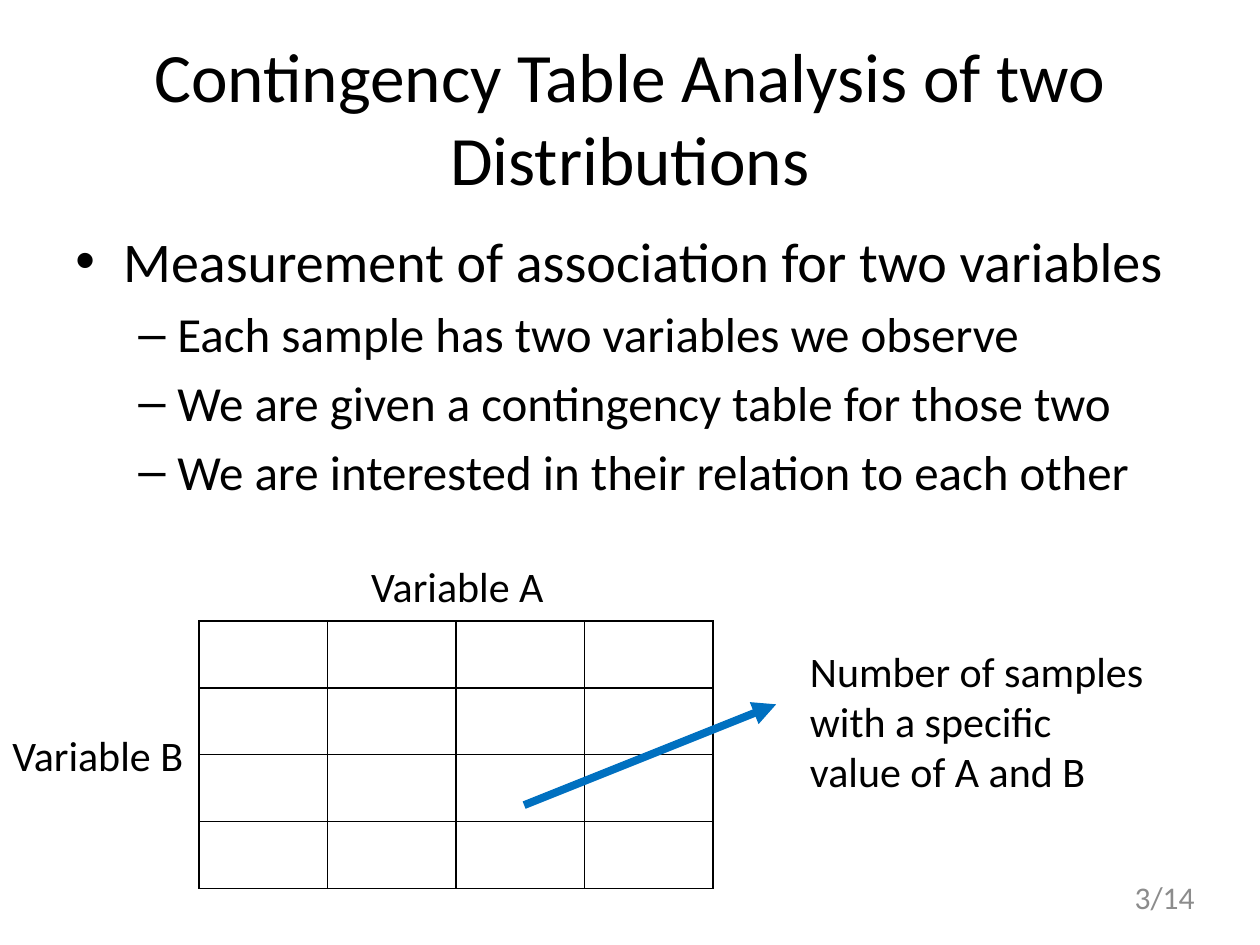
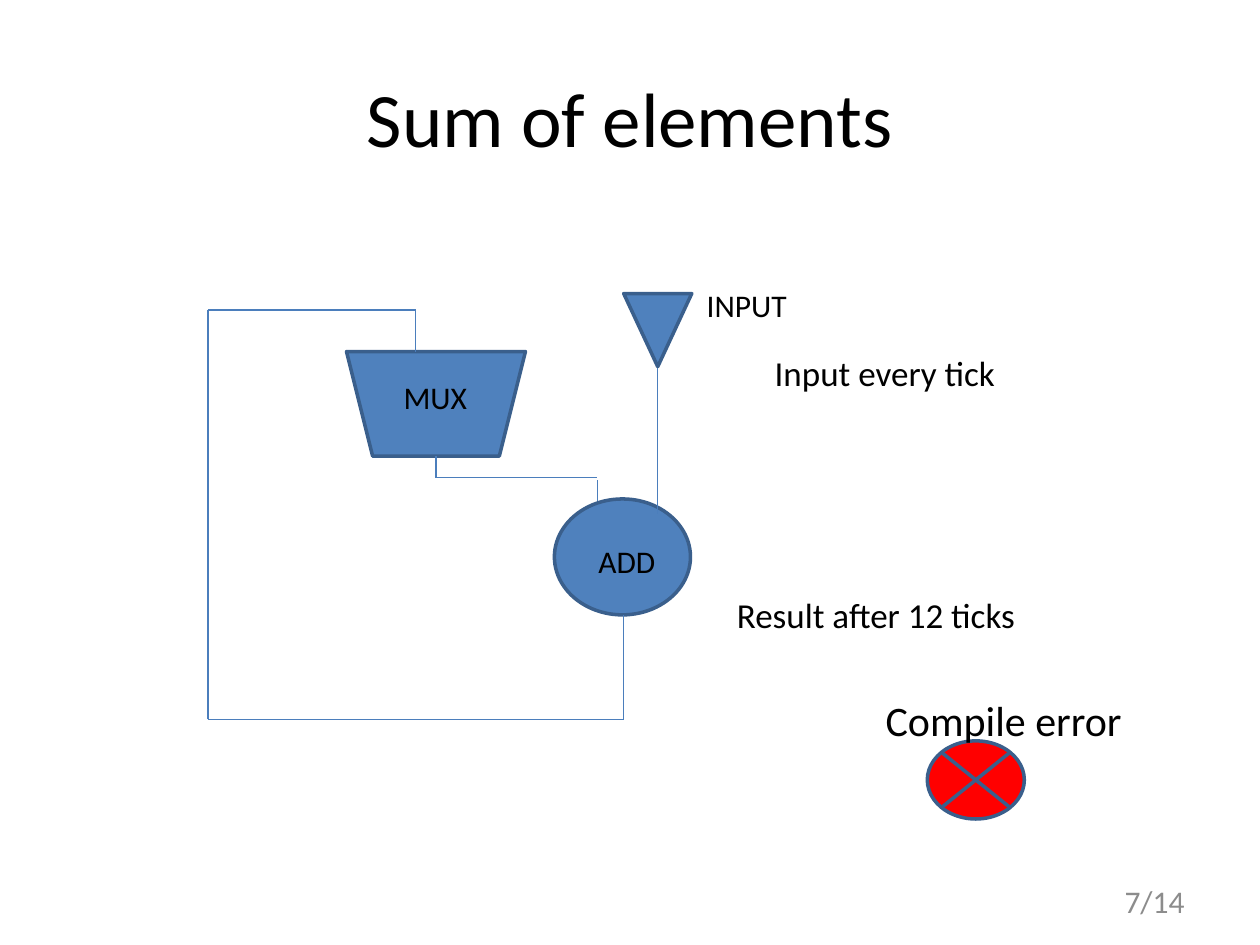
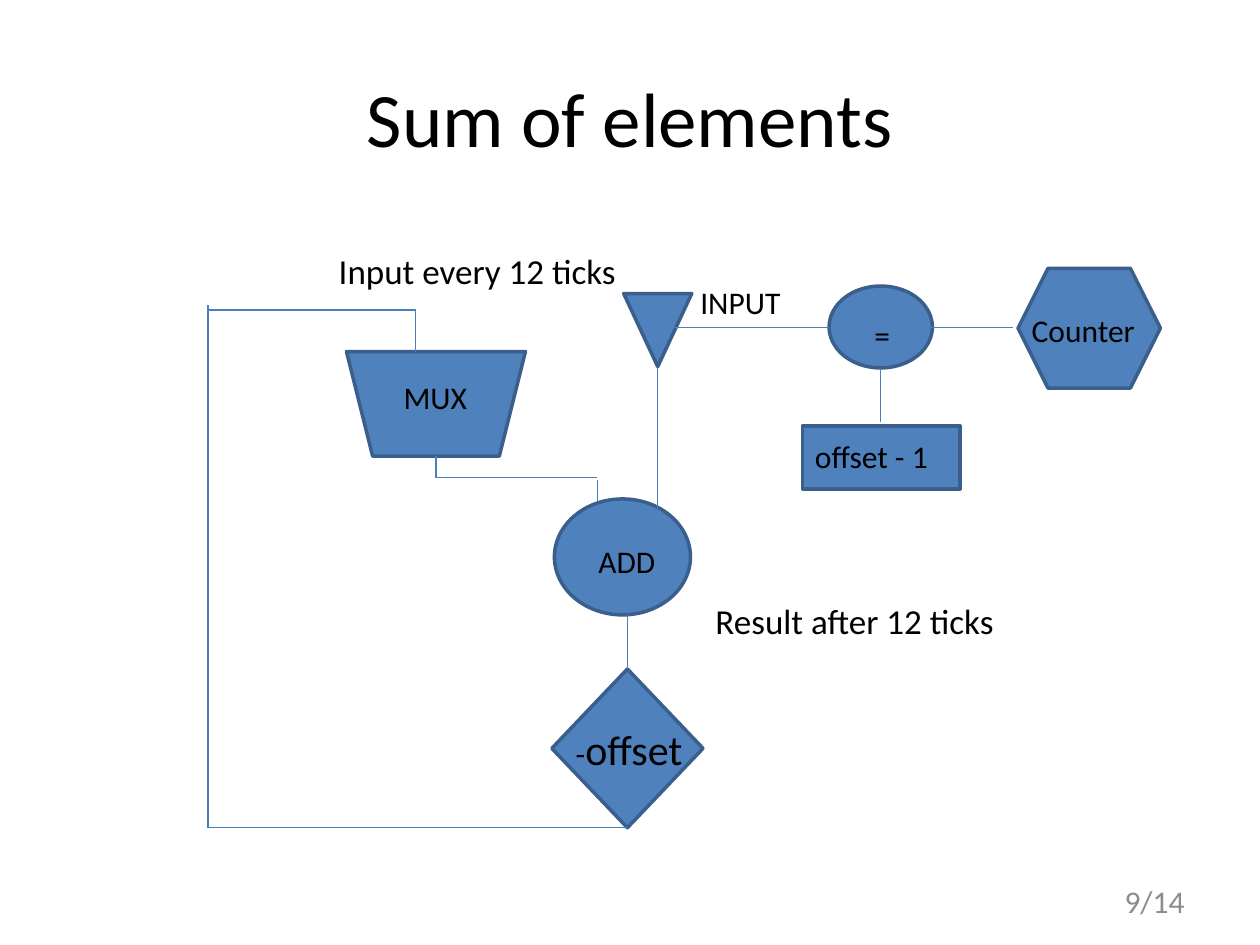
import pptx
import pptx.dml.color
import pptx.enum.shapes
import pptx.enum.text
import pptx.oxml
import pptx.oxml.ns
import pptx.util
import lxml.etree

SHAPES = pptx.enum.shapes.MSO_SHAPE
ALIGN = pptx.enum.text.PP_ALIGN
ANCHOR = pptx.enum.text.MSO_ANCHOR
FONT = "Calibri"
INK, MUTED, WHITE = "000000", "8C8C8C", "FFFFFF"
BLUE, EDGE, WIRE, ARROW, ERROR = "4F81BD", "3A5F8C", "4B7EBC", "0070C0", "FF0000"
COLUMNS, ROWS = 10, 7.5
PAGE_COUNT = 14
BULLETS = {0: ("•", 32, 0.38, -0.38), 1: ("–", 28, 0.81, -0.31)}


def color(value):
    return pptx.dml.color.RGBColor.from_string(value)


def add_xml(parent, tag, **attributes):
    return lxml.etree.SubElement(parent, pptx.oxml.ns.qn(tag), attributes)


class Deck:
    def __init__(self):
        self.deck = pptx.Presentation()
        self.deck.slide_width = pptx.util.Inches(10)
        self.deck.slide_height = pptx.util.Inches(7.5)
        self.page = None

    def x(self, columns):
        return round(self.deck.slide_width * columns / COLUMNS)

    def y(self, rows):
        return round(self.deck.slide_height * rows / ROWS)

    def area(self, left, top, width, height):
        return self.x(left), self.y(top), self.x(width), self.y(height)

    def new_page(self, title, number, title_size=44, number_at=(7.17, 6.95)):
        self.page = self.deck.slides.add_slide(self.deck.slide_layouts[6])
        self.page.background.fill.solid()
        self.page.background.fill.fore_color.rgb = color(WHITE)
        self.text((0.5, 0.3, 9, 1.25), title, title_size, ALIGN.CENTER, anchor=ANCHOR.MIDDLE)
        self.text((*number_at, 2.33, 0.4), f"{number}/{PAGE_COUNT}", 18, ALIGN.RIGHT, MUTED, ANCHOR.MIDDLE)

    def frame(self, area, anchor=ANCHOR.TOP):
        box = self.page.shapes.add_textbox(*self.area(*area))
        box.text_frame.word_wrap = True
        box.text_frame.vertical_anchor = anchor
        return box.text_frame

    def span(self, para, words, size, ink=INK):
        span = para.add_run()
        span.text = words
        span.font.name = FONT
        span.font.size = pptx.util.Pt(size)
        span.font.color.rgb = color(ink)

    def text(self, area, words, size, align=ALIGN.LEFT, ink=INK, anchor=ANCHOR.TOP):
        frame = self.frame(area, anchor)
        for index, line in enumerate(words.split("\n")):
            para = frame.add_paragraph() if index else frame.paragraphs[0]
            para.alignment = align
            self.span(para, line, size, ink)
        return frame

    def bullets(self, area, items):
        frame = self.frame(area)
        for index, (level, words) in enumerate(items):
            mark, size, margin, indent = BULLETS[level]
            para = frame.add_paragraph() if index else frame.paragraphs[0]
            para.level = level
            para.space_before = pptx.util.Pt(size * 0.2)
            self.span(para, words, size)
            properties = para._p.get_or_add_pPr()
            properties.set("marL", str(pptx.util.Inches(margin)))
            properties.set("indent", str(pptx.util.Inches(indent)))
            add_xml(properties, "a:buFont", typeface="Arial")
            add_xml(properties, "a:buChar", char=mark)

    def shape(self, kind, area, fill=BLUE, turn=0):
        shape = self.page.shapes.add_shape(kind, *self.area(*area))
        shape.shadow.inherit = False
        shape.rotation = turn
        shape.fill.solid()
        shape.fill.fore_color.rgb = color(fill)
        shape.line.color.rgb = color(EDGE)
        shape.line.width = pptx.util.Pt(2)

    def line(self, start, end, ink=WIRE, width=0.75, arrow=False):
        line = self.page.shapes.add_connector(
            pptx.enum.shapes.MSO_CONNECTOR.STRAIGHT,
            self.x(start[0]), self.y(start[1]), self.x(end[0]), self.y(end[1]))
        line.line.color.rgb = color(ink)
        line.line.width = pptx.util.Pt(width)
        properties = line.element.spPr
        if arrow:
            add_xml(properties.find(pptx.oxml.ns.qn("a:ln")), "a:tailEnd", type="triangle")
        add_xml(properties, "a:effectLst")

    def wire(self, *points):
        for start, end in zip(points, points[1:]):
            self.line(start, end)

    def empty_table(self, area, rows, columns):
        table = self.page.shapes.add_table(rows, columns, *self.area(*area)).table
        table.first_row = table.horz_banding = False
        for cell in table.iter_cells():
            properties = cell._tc.get_or_add_tcPr()
            for side in ("a:lnL", "a:lnR", "a:lnT", "a:lnB"):
                border = add_xml(properties, side, w=str(pptx.util.Pt(1)))
                add_xml(add_xml(border, "a:solidFill"), "a:srgbClr", val=INK)
            cell.fill.background()


def add_contingency(deck):
    deck.new_page("Contingency Table Analysis of two Distributions", 3, 39.6, (7.25, 6.92))
    deck.bullets((0.5, 1.75, 9, 4.95), [
        (0, "Measurement of association for two variables"),
        (1, "Each sample has two variables we observe"),
        (1, "We are given a contingency table for those two"),
        (1, "We are interested in their relation to each other"),
    ])
    deck.empty_table((1.58, 4.93, 4.08, 2.12), 4, 4)
    deck.text((1.84, 4.4, 3.58, 0.5), "Variable A", 24, ALIGN.CENTER)
    deck.text((0, 5.74, 1.84, 0.5), "Variable B", 24)
    deck.line((4.16, 6.39), (6.16, 5.59), ARROW, 4.5, arrow=True)
    deck.text((6.33, 5.07, 3.08, 1.31), "Number of samples with a specific\nvalue of A and B", 24)


def add_adder(deck, number):
    deck.new_page("Sum of elements", number)
    deck.shape(SHAPES.TRAPEZOID, (2.75, 2.79, 1.42, 0.83), turn=180)
    deck.shape(SHAPES.OVAL, (4.4, 3.96, 1.08, 0.92))
    deck.shape(SHAPES.ISOSCELES_TRIANGLE, (4.95, 2.33, 0.54, 0.58), turn=180)
    deck.wire((1.65, 2.46), (3.3, 2.46), (3.3, 2.79))
    deck.wire((5.22, 2.92), (5.22, 4.08))
    deck.wire((3.46, 3.62), (3.46, 3.79), (4.74, 3.79))
    deck.wire((4.74, 3.81), (4.74, 3.98))
    deck.text((2.92, 2.95, 1.07, 0.4), "MUX", 18, ALIGN.CENTER)
    deck.text((4.47, 4.25, 1.01, 0.4), "ADD", 18, ALIGN.CENTER)


def add_simple_sum(deck):
    add_adder(deck, 7)
    deck.wire((4.95, 4.88), (4.95, 5.71), (1.65, 5.71), (1.65, 2.46))
    deck.text((5.51, 2.22, 1.08, 0.4), "INPUT", 18)
    deck.text((5.75, 4.66, 3.7, 0.44), "Result after 12 ticks", 20)
    deck.text((6.05, 2.74, 2.62, 0.44), "Input every tick", 20)
    deck.shape(SHAPES.FLOWCHART_SUMMING_JUNCTION, (7.36, 5.88, 0.77, 0.62), ERROR)
    deck.text((6.93, 5.46, 2.23, 0.5), "Compile error", 24)


def add_offset_sum(deck):
    add_adder(deck, 9)
    deck.text((5.46, 2.2, 1.08, 0.4), "INPUT", 18)
    deck.text((2.59, 1.93, 3.16, 0.44), "Input every 12 ticks", 20)
    deck.shape(SHAPES.DIAMOND, (4.38, 5.31, 1.2, 1.26))
    offset = deck.text((4.47, 5.69, 2.49, 0.5), "-", 18)
    deck.span(offset.paragraphs[0], "offset", 24)
    deck.text((5.58, 4.71, 3.18, 0.44), "Result after 12 ticks", 20)
    deck.wire((4.98, 4.88), (4.98, 5.31))
    deck.wire((4.98, 6.57), (1.65, 6.57), (1.65, 2.42))
    deck.shape(SHAPES.HEXAGON, (8.08, 2.13, 1.13, 0.95))
    deck.text((8.09, 2.42, 1.9, 0.4), "Counter", 18)
    deck.shape(SHAPES.OVAL, (6.58, 2.27, 0.82, 0.65))
    deck.text((6.84, 2.46, 0.65, 0.4), "=", 18)
    deck.shape(SHAPES.RECTANGLE, (6.37, 3.38, 1.25, 0.5))
    deck.text((6.37, 3.42, 1.44, 0.4), "offset - 1", 18)
    deck.wire((5.22, 2.6), (6.58, 2.6))
    deck.wire((6.99, 2.93), (6.99, 3.35))
    deck.wire((7.32, 2.6), (8.04, 2.6))


def main():
    deck = Deck()
    add_contingency(deck)
    add_simple_sum(deck)
    add_offset_sum(deck)
    deck.deck.save("out.pptx")


if __name__ == "__main__":
    main()
